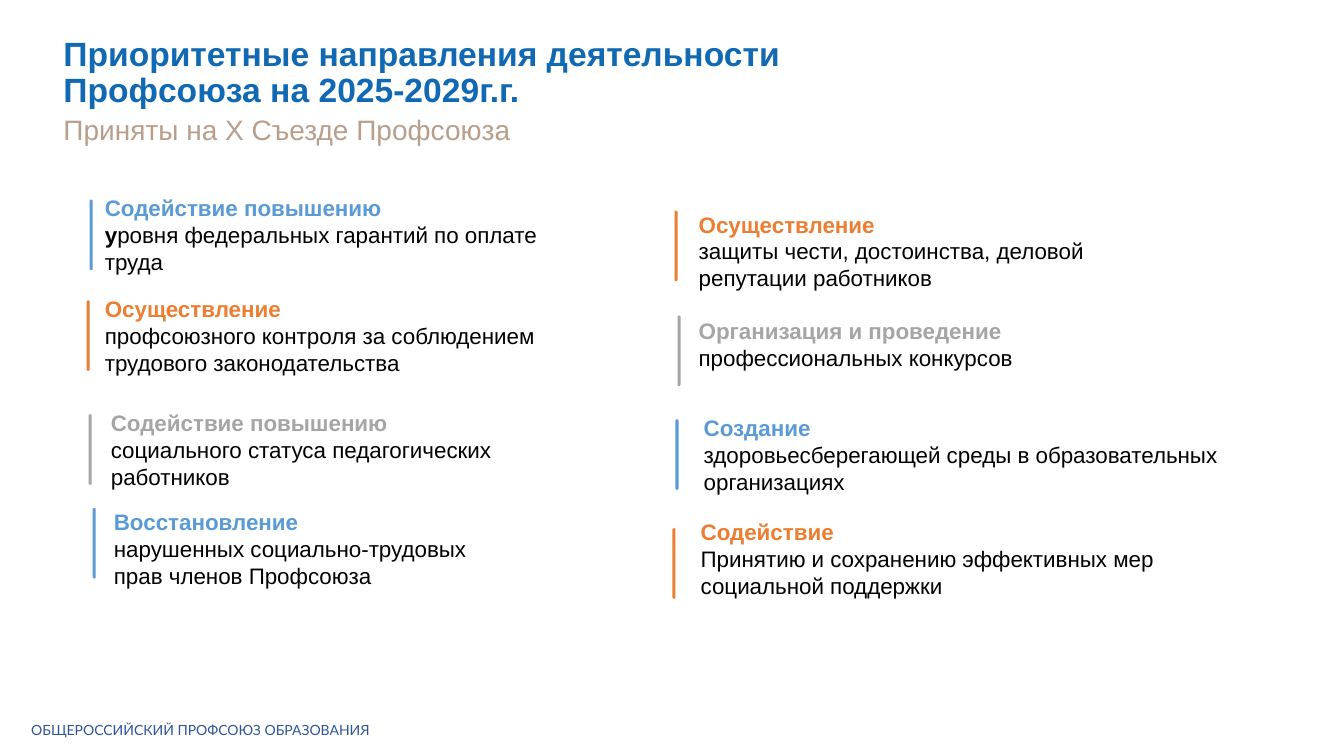
from lxml import etree
from pptx import Presentation
from pptx.dml.color import RGBColor
from pptx.enum.shapes import MSO_SHAPE
from pptx.enum.text import MSO_ANCHOR
from pptx.oxml import parse_xml
from pptx.util import Inches, Pt

ROUND = MSO_SHAPE.ROUNDED_RECTANGLE
TOP, BOTTOM = MSO_ANCHOR.TOP, MSO_ANCHOR.BOTTOM
NAVY = RGBColor(0x2F, 0x55, 0x97)
TITLE = RGBColor(0x10, 0x69, 0xB2)
SAND = RGBColor(0xB7, 0x9F, 0x8B)
BLUE = RGBColor(0x5B, 0x9B, 0xD5)
ORANGE = RGBColor(0xED, 0x7D, 0x31)
GREY = RGBColor(0xA5, 0xA5, 0xA5)
BLACK = RGBColor(0, 0, 0)
NS = "http://schemas.openxmlformats.org/drawingml/2006/main"
SHADE = (f'<a:effectLst xmlns:a="{NS}"><a:outerShdw blurRad="50800" '
         'dist="38100" dir="5400000" algn="t" rotWithShape="0">'
         '<a:srgbClr val="000000"><a:alpha val="40000"/></a:srgbClr>'
         '</a:outerShdw></a:effectLst>')

GOALS = [
    (1.04, 1.93, 0.89, 1.98, BLUE, "Содействие повышению",
     "уровня федеральных гарантий по оплате\vтруда"),
    (1.04, 2.93, 0.86, 2.98, ORANGE, "Осуществление",
     "профсоюзного контроля за соблюдением\vтрудового законодательства"),
    (1.1, 4.06, 0.88, 4.11, GREY, "Содействие повышению",
     "социального статуса педагогических\vработников"),
    (1.13, 5.04, 0.92, 5.04, BLUE, "Восстановление",
     "нарушенных социально-трудовых\vправ членов Профсоюза"),
    (6.93, 2.09, 6.69, 2.09, ORANGE, "Осуществление",
     "защиты чести, достоинства, деловой\vрепутации работников"),
    (6.93, 3.15, 6.72, 3.13, GREY, "Организация и проведение",
     "профессиональных конкурсов"),
    (6.98, 4.11, 6.7, 4.16, BLUE, "Создание",
     "здоровьесберегающей среды в образовательных организациях"),
    (6.95, 5.14, 6.67, 5.24, ORANGE, "Содействие",
     "Принятию и сохранению эффективных мер\vсоциальной поддержки"),
]


def add_box(slide, left, top, width, height, anchor=TOP):
    """Add a wrapping text box without insets and return its frame."""
    box = slide.shapes.add_textbox(*map(Inches, (left, top, width, height)))
    frame = box.text_frame
    frame.word_wrap = True
    frame.vertical_anchor = anchor
    frame.margin_left = frame.margin_right = 0
    frame.margin_top = frame.margin_bottom = 0
    return frame


def style(para, size, color, bold=False, face="Arial", space=1.0):
    """Set the font and line spacing of a paragraph."""
    para.line_spacing = space
    font = para.font
    font.name, font.size, font.bold = face, Pt(size), bold
    font.color.rgb = color


def add_head(slide, top, height, text, size, color, bold, space, anchor):
    """Add one heading line with shadowed letters."""
    frame = add_box(slide, 0.63, top, 8.3, height, anchor)
    para = frame.paragraphs[0]
    run = para.add_run()
    run.text = text
    style(para, size, color, bold, space=space)
    run.font.color.rgb = color
    fill = run.font._element.find(f"{{{NS}}}solidFill")
    fill.addnext(parse_xml(etree.tostring(etree.fromstring(SHADE))))


def add_goal(slide, left, top, bar_x, bar_y, color, head, text):
    """Add a goal with its coloured bar."""
    bar = slide.shapes.add_shape(
        ROUND, *map(Inches, (bar_x, bar_y, 0.03, 0.7)))
    bar.adjustments[0] = 0.5
    bar.shadow.inherit = False
    bar.fill.solid()
    bar.fill.fore_color.rgb = color
    bar.line.fill.background()
    frame = add_box(slide, left, top, 5.64, 0.81)
    title = frame.paragraphs[0]
    title.text = head
    style(title, 16, color, True)
    body = frame.add_paragraph()
    body.text = text
    style(body, 16, BLACK)
    return body


def embolden(para):
    """Make the first letter of a paragraph bold."""
    text = para.text
    para.clear()
    first = para.add_run()
    first.text = text[0]
    first.font.bold = True
    lines = text[1:].split("\v")
    for i, line in enumerate(lines):
        if i:
            para.add_line_break()
        para.add_run().text = line


def main():
    """Build and save the slide."""
    deck = Presentation()
    deck.slide_width, deck.slide_height = Inches(13.33), Inches(7.5)
    slide = deck.slides.add_slide(deck.slide_layouts[6])
    add_head(slide, 0.27, 0.82,
             "Приоритетные направления деятельности "
             "Профсоюза на 2025-2029г.г.", 24, TITLE, True, 0.9, BOTTOM)
    add_head(slide, 1.18, 0.28, "Приняты на Х Съезде Профсоюза",
             20, SAND, False, 0.8, TOP)
    bodies = [add_goal(slide, *goal) for goal in GOALS]
    embolden(bodies[0])
    foot = add_box(slide, 0.31, 7.18, 8.3, 0.28).paragraphs[0]
    foot.text = "ОБЩЕРОССИЙСКИЙ ПРОФСОЮЗ ОБРАЗОВАНИЯ"
    style(foot, 10, NAVY, face="Lato", space=0.9)
    deck.save("out.pptx")


if __name__ == "__main__":
    main()
